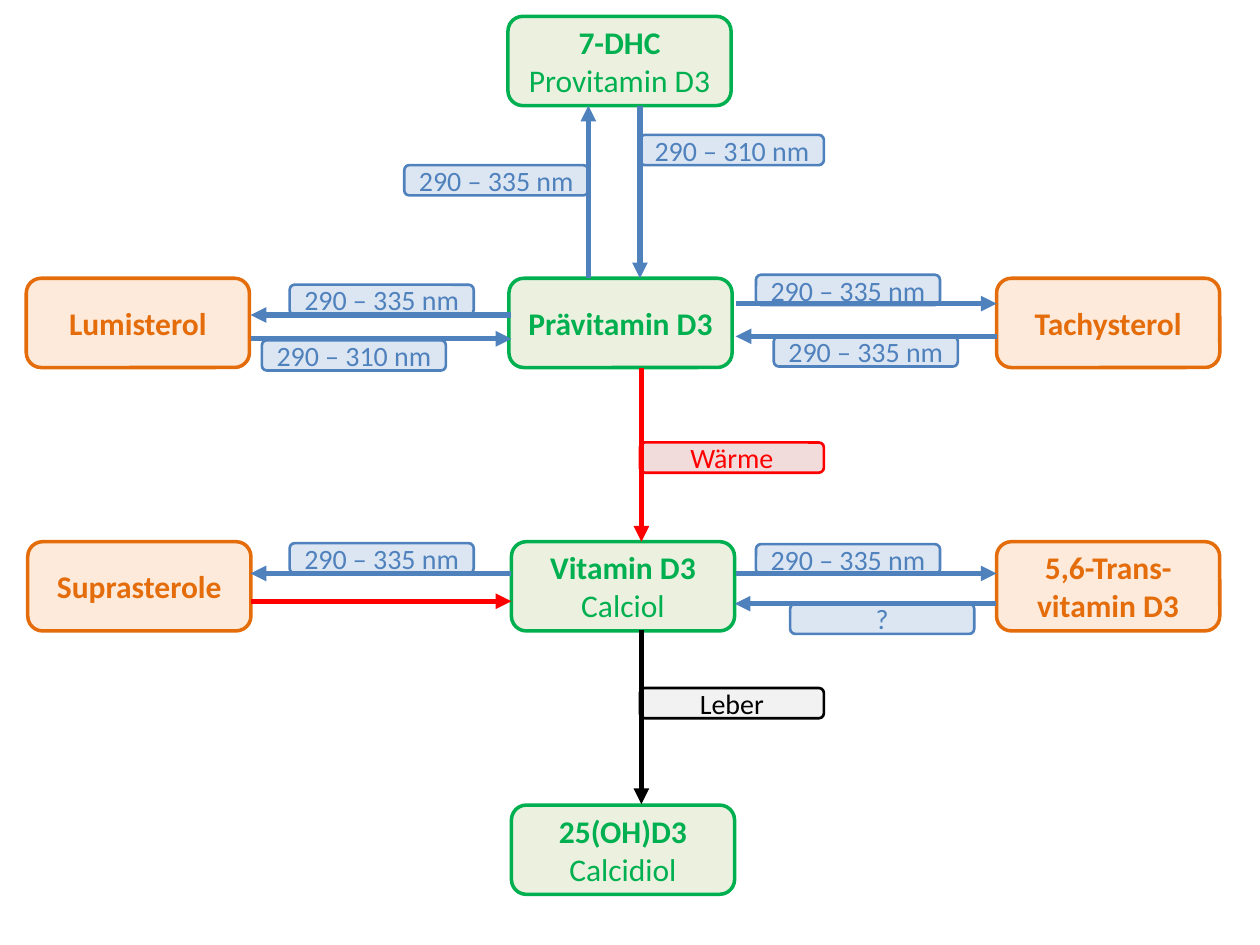
from lxml.etree import SubElement
from pptx import Presentation
from pptx.dml.color import RGBColor
from pptx.enum.shapes import MSO_CONNECTOR, MSO_SHAPE
from pptx.enum.text import MSO_ANCHOR, PP_ALIGN
from pptx.oxml.ns import qn
from pptx.util import Cm, Pt

GREEN, ORANGE, BLUE, RED, BLACK = "00B050", "E46C0A", "4F81BD", "FF0000", "000000"
FILLS = {GREEN: "EBF1DE", ORANGE: "FDEADA", BLUE: "DCE6F2", RED: "F2DCDB", BLACK: "F2F2F2"}
NODE = {"width": 4.5, "height": 1.8, "line": 2, "size": 18}
LABEL = {"width": 3.71, "height": 0.61, "line": 1.5, "size": 16}
ROWS = [0.33, 5.61, 10.92, 16.23]
SHORT_WAVE, LONG_WAVE = "290 – 310 nm", "290 – 335 nm"


def color(value):
    return RGBColor.from_string(value)


def add_box(page, left, top, lines, tone, style, bold_first):
    box = page.shapes.add_shape(
        MSO_SHAPE.ROUNDED_RECTANGLE,
        Cm(left), Cm(top), Cm(style["width"]), Cm(style["height"]),
    )
    box.shadow.inherit = False
    box.fill.solid()
    box.fill.fore_color.rgb = color(FILLS[tone])
    box.line.color.rgb = color(tone)
    box.line.width = Pt(style["line"])
    frame = box.text_frame
    frame.word_wrap = True
    frame.vertical_anchor = MSO_ANCHOR.MIDDLE
    for index, text in enumerate(lines):
        para = frame.add_paragraph() if index else frame.paragraphs[0]
        para.alignment = PP_ALIGN.CENTER
        span = para.add_run()
        span.text = text
        span.font.color.rgb = color(tone)
        font_format = {
            "name": "Calibri",
            "size": Pt(style["size"]),
            "bold": bold_first and index == 0,
        }
        for name, value in font_format.items():
            setattr(span.font, name, value)


deck = Presentation()
deck.slide_width, deck.slide_height = Cm(25.4), Cm(19.05)
page = deck.slides.add_slide(deck.slide_layouts[6])

labels = [
    (12.9, 2.72, SHORT_WAVE, BLUE),
    (8.15, 3.33, LONG_WAVE, BLUE),
    (5.84, 5.74, LONG_WAVE, BLUE),
    (5.28, 6.86, SHORT_WAVE, BLUE),
    (15.24, 5.54, LONG_WAVE, BLUE),
    (15.6, 6.78, LONG_WAVE, BLUE),
    (12.9, 8.92, "Wärme", RED),
    (5.84, 10.95, LONG_WAVE, BLUE),
    (15.24, 10.97, LONG_WAVE, BLUE),
    (15.93, 12.17, "?", BLUE),
    (12.9, 13.87, "Leber", BLACK),
]
for left, top, text, tone in labels:
    add_box(page, left, top, [text], tone, LABEL, False)

nodes = [
    (10.24, 0, ["7-DHC", "Provitamin D3"], GREEN),
    (0.53, 1, ["Lumisterol"], ORANGE),
    (10.26, 1, ["Prävitamin D3"], GREEN),
    (20.09, 1, ["Tachysterol"], ORANGE),
    (0.56, 2, ["Suprasterole"], ORANGE),
    (10.31, 2, ["Vitamin D3", "Calciol"], GREEN),
    (20.09, 2, ["5,6-Trans-vitamin D3"], ORANGE),
    (10.31, 3, ["25(OH)D3", "Calcidiol"], GREEN),
]
for left, row, lines, tone in nodes:
    add_box(page, left, ROWS[row], lines, tone, NODE, True)

arrows = [
    (11.86, 5.61, 11.86, 2.13, BLUE),
    (12.9, 2.13, 12.9, 5.61, BLUE),
    (10.31, 6.35, 5.05, 6.35, BLUE),
    (5.05, 6.83, 10.31, 6.83, BLUE),
    (14.83, 6.12, 20.09, 6.12, BLUE),
    (20.09, 6.78, 14.83, 6.78, BLUE),
    (12.93, 7.42, 12.93, 10.92, RED),
    (10.31, 11.56, 5.05, 11.56, BLUE),
    (5.05, 12.12, 10.31, 12.12, RED),
    (14.83, 11.56, 20.09, 11.56, BLUE),
    (20.07, 12.17, 14.81, 12.17, BLUE),
    (12.93, 12.7, 12.93, 16.21, BLACK),
]
for start_x, start_y, end_x, end_y, tone in arrows:
    arrow = page.shapes.add_connector(
        MSO_CONNECTOR.STRAIGHT, Cm(start_x), Cm(start_y), Cm(end_x), Cm(end_y)
    )
    arrow.line.color.rgb = color(tone)
    arrow.line.width = Pt(3)
    SubElement(arrow.line._get_or_add_ln(), qn("a:tailEnd"), type="triangle")
    SubElement(arrow._element.spPr, qn("a:effectLst"))

deck.save("out.pptx")
